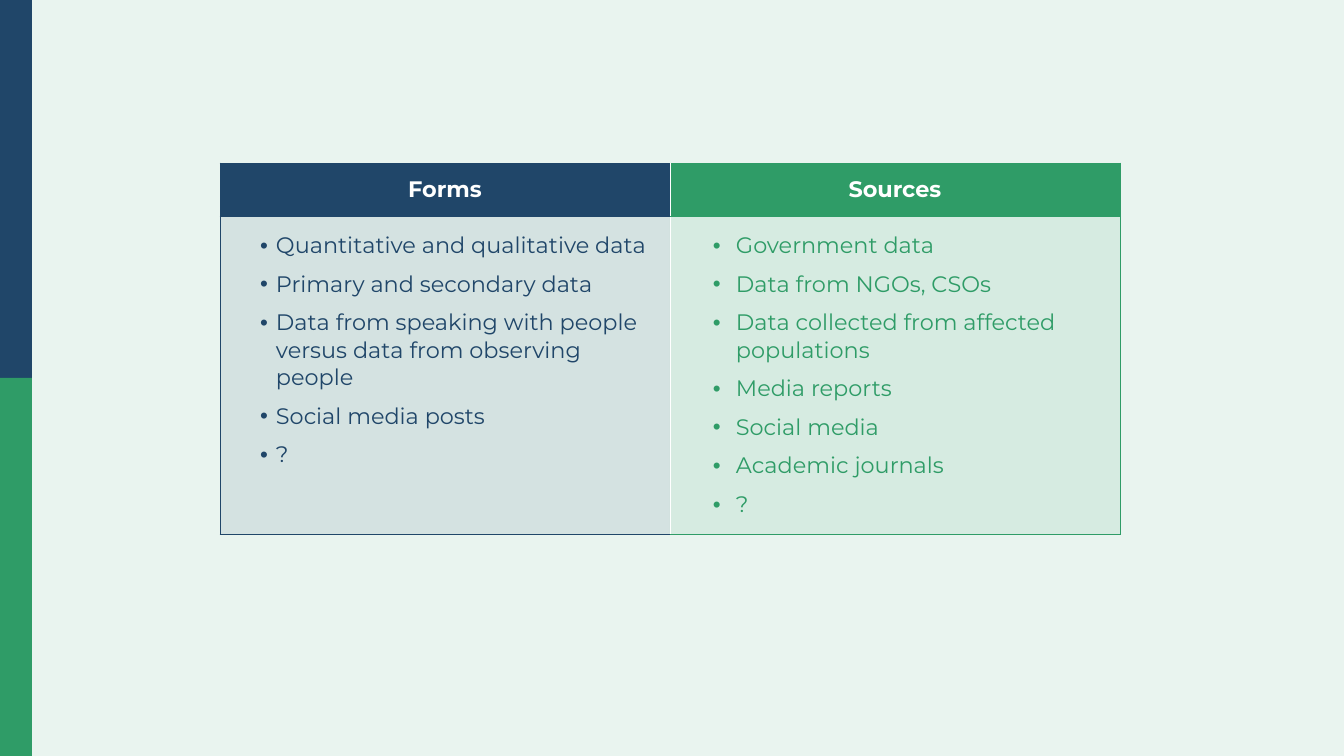
from lxml.etree import SubElement
from pptx import Presentation
from pptx.dml.color import RGBColor
from pptx.enum.shapes import MSO_SHAPE as SHAPE
from pptx.enum.text import MSO_ANCHOR as ANCHOR, PP_ALIGN as ALIGN
from pptx.oxml.ns import qn
from pptx.util import Pt

SCALE = 914400 / 134.4
NAVY, GREEN, WHITE = "204669", "2F9C67", "FFFFFF"
COLUMNS = [
    ("Forms", NAVY, 43, 16, [
        "Quantitative and qualitative data",
        "Primary and secondary data",
        "Data from speaking with people versus data from observing people",
        "Social media posts",
        "?",
    ]),
    ("Sources", GREEN, 53, 23, [
        "Government data",
        "Data from NGOs, CSOs",
        "Data collected from affected populations",
        "Media reports",
        "Social media",
        "Academic journals",
        "?",
    ]),
]


def px(n):
    return round(n * SCALE)


def rgb(color):
    return RGBColor.from_string(color)


def paint(fill, color):
    fill.solid()
    fill.fore_color.rgb = rgb(color)


def fade(parent, percent):
    color = parent.find(qn("a:solidFill")).find(qn("a:srgbClr"))
    SubElement(color, qn("a:alpha"), val=str(percent * 1000))


def set_borders(cell, left, right, edge):
    tc_pr = cell._tc.get_or_add_tcPr()
    for side, color in zip("LRTB", (left, right, edge, edge)):
        ln = SubElement(tc_pr, qn(f"a:ln{side}"), w=str(Pt(0.5)))
        solid = SubElement(ln, qn("a:solidFill"))
        SubElement(solid, qn("a:srgbClr"), val=color)


def style_font(p, color, bold):
    for r in p.runs:
        r.font.name = "Montserrat"
        r.font.size = Pt(12)
        r.font.bold = bold
        r.font.color.rgb = rgb(color)


def add_side_bar(s, x, y, w, h):
    half = h // 2
    for i, color in enumerate((NAVY, GREEN)):
        sp = s.shapes.add_shape(SHAPE.RECTANGLE, px(x), px(y + i * half), px(w), px(half))
        sp.shadow.inherit = False
        paint(sp.fill, color)
        sp.line.fill.background()


def fill_header(cell, title, color):
    cell.vertical_anchor = ANCHOR.MIDDLE
    p = cell.text_frame.paragraphs[0]
    p.text = title
    p.alignment = ALIGN.CENTER
    style_font(p, WHITE, True)
    paint(cell.fill, color)


def fill_list(cell, items, color, indent, hang):
    cell.margin_left = cell.margin_right = px(13)
    cell.margin_top = cell.margin_bottom = px(16)
    tf = cell.text_frame
    tf.text = "\n".join(items)
    for p in tf.paragraphs:
        p_pr = p._p.get_or_add_pPr()
        p_pr.set("marL", str(px(indent)))
        p_pr.set("indent", str(-px(hang)))
        p.space_after = Pt(6)
        SubElement(p_pr, qn("a:buFont"), typeface="Arial")
        SubElement(p_pr, qn("a:buChar"), char="•")
        style_font(p, color, False)
    paint(cell.fill, color)
    fade(cell._tc.tcPr, 10)


def add_data_table(s, x, y, w, h):
    header_h = 53
    table = s.shapes.add_table(2, len(COLUMNS), px(x), px(y), px(w), px(h)).table
    table.horz_banding = False
    table.rows[0].height = px(header_h)
    table.rows[1].height = px(h - header_h)
    for i, (title, color, indent, hang, items) in enumerate(COLUMNS):
        table.columns[i].width = px(w // len(COLUMNS))
        left = color if i == 0 else WHITE
        right = color if i == len(COLUMNS) - 1 else WHITE
        for row in range(2):
            set_borders(table.cell(row, i), left, right, color)
        fill_header(table.cell(0, i), title, color)
        fill_list(table.cell(1, i), items, color, indent, hang)


def main():
    prs = Presentation()
    prs.slide_width, prs.slide_height = px(1344), px(756)
    s = prs.slides.add_slide(prs.slide_layouts[6])
    paint(s.background.fill, GREEN)
    fade(s.element.find(".//" + qn("p:bgPr")), 10)
    add_side_bar(s, 0, 0, 32, 756)
    add_data_table(s, 220, 163, 900, 370)
    prs.save("out.pptx")


if __name__ == "__main__":
    main()
